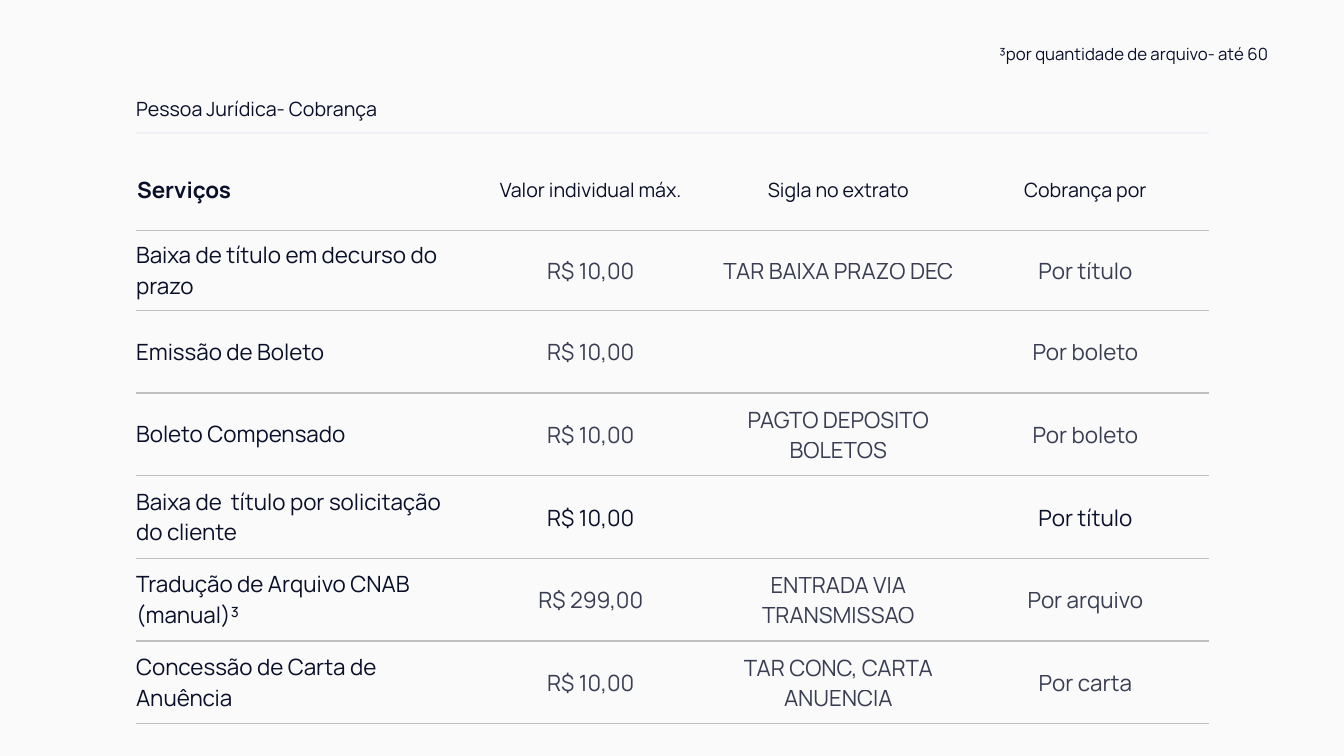
from lxml.etree import SubElement
from pptx import Presentation
from pptx.dml.color import RGBColor
from pptx.enum.shapes import MSO_CONNECTOR
from pptx.enum.text import MSO_ANCHOR, PP_ALIGN
from pptx.oxml import parse_xml
from pptx.oxml.ns import nsdecls, qn
from pptx.util import Inches, Pt

INK = RGBColor(0x09, 0x0E, 0x29)
PAPER = RGBColor(0xFA, 0xFA, 0xFA)
BLUE = RGBColor(0x12, 0x26, 0xAA)
GREY = RGBColor(0xBF, 0xBF, 0xBF)
FONT = "Manrope"

TITLE = "Pessoa Jurídica- Cobrança"
NOTE = "³por quantidade de arquivo- até 60"
ROWS = [
    ("Serviços", "Valor individual máx.", "Sigla no extrato", "Cobrança por"),
    ("Baixa de título em decurso do prazo", "R$ 10,00", "TAR BAIXA PRAZO DEC", "Por título"),
    ("Emissão de Boleto", "R$ 10,00", "", "Por boleto"),
    ("Boleto Compensado", "R$ 10,00", "PAGTO DEPOSITO BOLETOS", "Por boleto"),
    ("Baixa de  título por solicitação do cliente", "R$ 10,00", "", "Por título"),
    ("Tradução de Arquivo CNAB (manual)³", "R$ 299,00", "ENTRADA VIA TRANSMISSAO", "Por arquivo"),
    ("Concessão de Carta de Anuência", "R$ 10,00", "TAR CONC, CARTA ANUENCIA", "Por carta"),
]
WIDTHS = [3.28, 2.46, 2.45, 2.45]
HEIGHTS = [0.82, 0.79] + [0.82] * 5
SOLID_ROW = 4
LEFT, TOP, WIDE = 1.35, 1.47, sum(WIDTHS)
RULE_Y = 1.32


def fade(fill, alpha):
    """Give a solid fill an opacity in percent."""
    for color in fill.iter(qn("a:srgbClr")):
        SubElement(color, qn("a:alpha"), val=str(alpha * 1000))


def write(frame, text, size=16, bold=False, align=PP_ALIGN.LEFT, alpha=100):
    """Put one formatted line of text into a text frame."""
    par = frame.paragraphs[0]
    par.alignment = align
    run = par.add_run()
    run.text = text
    font = run.font
    font.name, font.size, font.bold = FONT, Pt(size), bold
    font.color.rgb = INK
    if alpha < 100:
        fade(run._r, alpha)


def pad(box, side, top, base):
    """Set the inner margins of a cell or a text frame."""
    box.margin_left = box.margin_right = Inches(side)
    box.margin_top, box.margin_bottom = Inches(top), Inches(base)


def edge(cell, first):
    """Draw only the level borders of a cell."""
    props = cell._tc.get_or_add_tcPr()
    ink = f'<a:solidFill><a:srgbClr val="{GREY}"/></a:solidFill>'
    shown = {"L": False, "R": False, "T": not first, "B": True}
    for spot, (side, show) in enumerate(shown.items()):
        fill = ink if show else "<a:noFill/>"
        props.insert(spot, parse_xml(
            f'<a:ln{side} {nsdecls("a")} w="{Pt(1)}">{fill}</a:ln{side}>'))


def add_grid(slide):
    """Add the table of services."""
    table = slide.shapes.add_table(
        len(ROWS), len(WIDTHS), Inches(LEFT), Inches(TOP),
        Inches(WIDE), Inches(sum(HEIGHTS))).table
    table.first_row = table.horz_banding = False
    for col, width in zip(table.columns, WIDTHS):
        col.width = Inches(width)
    for r, (line, height) in enumerate(zip(ROWS, HEIGHTS)):
        table.rows[r].height = Inches(height)
        for c, text in enumerate(line):
            cell = table.cell(r, c)
            cell.fill.background()
            edge(cell, r == 0)
            cell.vertical_anchor = MSO_ANCHOR.MIDDLE
            inset = 0.01 if r == 0 or c else 0
            pad(cell, inset, inset, 0)
            if text:
                write(cell.text_frame, text,
                      size=14 if r == 0 and c else 16,
                      bold=r == c == 0,
                      align=PP_ALIGN.CENTER if c else PP_ALIGN.LEFT,
                      alpha=80 if c and r not in (0, SOLID_ROW) else 100)


def main():
    """Build the slide of billing fees."""
    deck = Presentation()
    deck.slide_width, deck.slide_height = Inches(13.33), Inches(7.5)
    slide = deck.slides.add_slide(deck.slide_layouts[5])
    slide.background.fill.solid()
    slide.background.fill.fore_color.rgb = PAPER

    add_grid(slide)

    title = slide.shapes.title
    title.left, title.top = Inches(LEFT), Inches(0.96)
    title.width, title.height = Inches(4.57), Inches(0.24)
    frame = title.text_frame
    frame.vertical_anchor = MSO_ANCHOR.TOP
    pad(frame, 0, 0, 0)
    write(frame, TITLE, size=14)

    rule = slide.shapes.add_connector(
        MSO_CONNECTOR.STRAIGHT, Inches(LEFT), Inches(RULE_Y),
        Inches(LEFT + WIDE), Inches(RULE_Y))
    rule.line.color.rgb = BLUE
    rule.line.width = Pt(0.25)
    props = rule._element.spPr
    fade(props, 30)
    SubElement(props, qn("a:effectLst"))

    note = slide.shapes.add_textbox(
        Inches(9.47), Inches(0.38), Inches(3.21), Inches(0.3))
    note.text_frame.word_wrap = False
    write(note.text_frame, NOTE, size=12, align=PP_ALIGN.RIGHT)

    deck.save("out.pptx")


if __name__ == "__main__":
    main()
